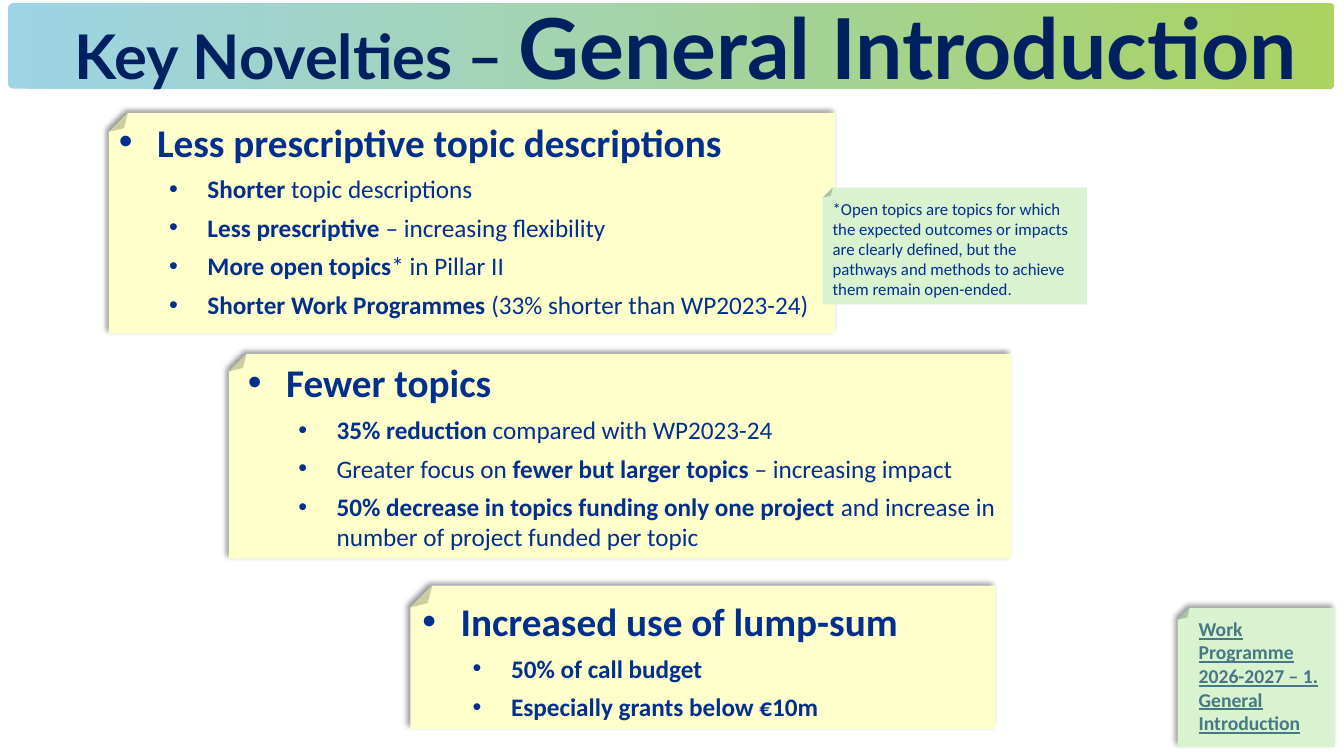
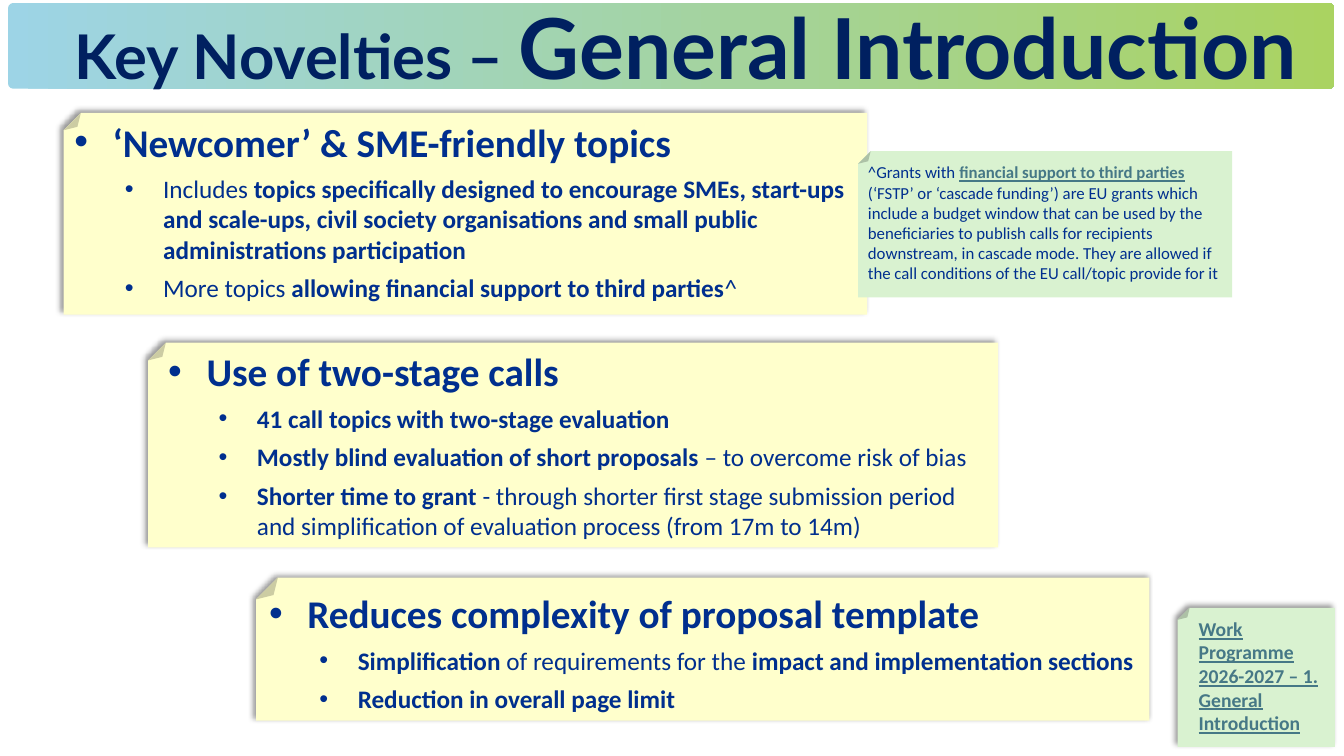
from pptx import Presentation
from pptx import util as u
from pptx.dml.color import RGBColor
from pptx.enum import shapes, text
from pptx.oxml.ns import qn
from lxml import etree

PX = 9144
SLIDE_SIZE = (1333, 750)
NAVY, BLUE, LINK = "002060", "002F8E", "467886"
YELLOW, GREEN = "FFFFCC", "D9F2D0"
BAND_COLOURS = ("9DD4E6", "AAD361")
FOLD, DEEP_FOLD = 0.086, 0.152
BAND_BOX = (8, 3, 1315, 85)
TITLE_BOX = (64, -9, 1259, 111)
TITLE_RUNS = (("Key Novelties – ", 44), ("General Introduction", 60))
SOURCE_BOX, SOURCE_TEXT_BOX = (1168, 603, 156, 138), (1179, 607, 148, 128)
SOURCE = "Work Programme 2026-2027 – 1. General Introduction"

SLIDES = [
    {
        "cards": [
            {"box": (407, 581, 580, 142), "text_box": (409, 588, 545, 135), "fold": DEEP_FOLD,
             "heading": "Increased use of lump-sum",
             "points": ["|50% of call budget|", "|Especially grants below €10m|"]},
            {"box": (227, 351, 776, 203), "text_box": (236, 351, 821, 204), "fold": FOLD,
             "heading": "Fewer topics",
             "points": ["|35% reduction |compared with WP2023-24",
                        "Greater focus on |fewer but larger topics |– increasing impact",
                        "|50% decrease in topics funding only one project |"
                        "and increase in number of project funded per topic"]},
            {"box": (108, 112, 720, 219), "text_box": (108, 112, 797, 212), "fold": FOLD,
             "heading": "Less prescriptive topic descriptions",
             "points": ["|Shorter| topic descriptions",
                        "|Less prescriptive |– increasing flexibility",
                        "|More open topics|* in Pillar II",
                        "|Shorter Work Programmes |(33% shorter than WP2023-24)"]},
        ],
        "note_box": (816, 186, 262, 116),
        "note": ["*Open topics are topics for which the expected outcomes or impacts are clearly "
                 "defined, but the pathways and methods to achieve them remain open-ended."],
    },
    {
        "cards": [
            {"box": (254, 573, 886, 142), "text_box": (257, 580, 878, 135), "fold": DEEP_FOLD,
             "heading": "Reduces complexity of proposal template",
             "points": ["|Simplification| of requirements for the |impact and implementation sections|",
                        "|Reduction in overall page limit|"]},
            {"box": (63, 112, 797, 200), "text_box": (64, 112, 797, 195), "fold": FOLD,
             "heading": "‘Newcomer’ & SME-friendly topics",
             "points": ["Includes |topics specifically designed to encourage SMEs, start-ups and "
                        "scale-ups, civil society organisations and small public administrations "
                        "participation|",
                        "More topics |allowing financial support to third parties|^"]},
            {"box": (147, 340, 843, 203), "text_box": (157, 340, 821, 204), "fold": FOLD,
             "heading": "Use of two-stage calls",
             "points": ["|41 call topics with two-stage evaluation|",
                        "|Mostly blind evaluation of short proposals |– to overcome risk of bias",
                        "|Shorter time to grant |- through shorter first stage submission period "
                        "and simplification of evaluation process (from 17m to 14m)"]},
        ],
        "note_box": (851, 150, 371, 145),
        "note": ["^Grants with |financial support to third parties|",
                 "(‘FSTP’ or ‘cascade funding’) are EU grants which include a budget window that can "
                 "be used by the beneficiaries to publish calls for recipients downstream, in cascade "
                 "mode. They are allowed if the call conditions of the EU call/topic provide for it"],
    },
]


def px(values):
    return [u.Emu(value * PX) for value in values]


def colour(value):
    return RGBColor.from_string(value)


def add_span(para, words, size, font="Calibri", ink=BLUE, bold=False, underline=False):
    span = para.add_run()
    span.text = words
    span.font.name, span.font.size = font, u.Pt(size)
    span.font.bold, span.font.underline = bold, underline
    span.font.color.rgb = colour(ink)


def add_marked(para, marked, size, emphasis):
    for index, words in enumerate(marked.split("|")):
        if words:
            add_span(para, words, size, **(emphasis if index % 2 else {}))


def add_text_box(page, box):
    frame = page.shapes.add_textbox(*px(box)).text_frame
    frame.word_wrap = True
    frame.vertical_anchor = text.MSO_ANCHOR.TOP
    return frame


def add_paras(frame, count):
    return [frame.paragraphs[0]] + [frame.add_paragraph() for _ in range(count - 1)]


def add_bullet(para, level):
    para.level = level
    para.space_after = u.Pt(6)
    props = para._p.get_or_add_pPr()
    props.set("marL", str(u.Inches(0.88 if level else 0.38)))
    props.set("indent", str(-u.Inches(0.38)))
    etree.SubElement(props, qn("a:buFont"), typeface="Arial")
    etree.SubElement(props, qn("a:buChar"), char="•")


def add_shape(page, kind, box, adjustment):
    shape = page.shapes.add_shape(kind, *px(box))
    guides = shape._element.spPr.find(qn("a:prstGeom")).find(qn("a:avLst"))
    for guide in list(guides):
        guides.remove(guide)
    etree.SubElement(guides, qn("a:gd"), name="adj", fmla=f"val {round(adjustment * 100000)}")
    shape.line.fill.background()
    shape.shadow.inherit = False
    return shape


def add_sheet(page, box, fill, fold=FOLD, shadow=True):
    sheet = add_shape(page, shapes.MSO_SHAPE.FOLDED_CORNER, box, fold)
    sheet.rotation = 180
    sheet.fill.solid()
    sheet.fill.fore_color.rgb = colour(fill)
    if shadow:
        effects = sheet._element.spPr.find(qn("a:effectLst"))
        outer = etree.SubElement(effects, qn("a:outerShdw"), blurRad=str(u.Pt(4)),
                                 dist=str(u.Pt(3)), dir="13500000", algn="br", rotWithShape="0")
        tint = etree.SubElement(outer, qn("a:srgbClr"), val="000000")
        etree.SubElement(tint, qn("a:alpha"), val="40000")


def add_card(page, card):
    add_sheet(page, card["box"], YELLOW, card["fold"])
    frame = add_text_box(page, card["text_box"])
    heading, *points = add_paras(frame, len(card["points"]) + 1)
    add_bullet(heading, 0)
    add_span(heading, card["heading"], 28, bold=True)
    for para, point in zip(points, card["points"]):
        add_bullet(para, 1)
        add_marked(para, point, 18, {"bold": True})


def add_source(page):
    add_sheet(page, SOURCE_BOX, GREEN)
    frame = add_text_box(page, SOURCE_TEXT_BOX)
    add_span(frame.paragraphs[0], SOURCE, 14, ink=LINK, bold=True, underline=True)


def add_note(page, box, lines):
    add_sheet(page, box, GREEN, shadow=False)
    left, top, width, height = box
    frame = add_text_box(page, (left, top + 6, width, height - 12))
    for para, line in zip(add_paras(frame, len(lines)), lines):
        add_marked(para, line, 12, {"ink": LINK, "bold": True, "underline": True})


def add_title(page):
    band = add_shape(page, shapes.MSO_SHAPE.ROUNDED_RECTANGLE, BAND_BOX, 0.06)
    band.fill.gradient()
    band.fill.gradient_angle = 0
    for stop, value in zip(band.fill.gradient_stops, BAND_COLOURS):
        stop.color.rgb = colour(value)
    para = add_text_box(page, TITLE_BOX).paragraphs[0]
    for words, size in TITLE_RUNS:
        add_span(para, words, size, font="Lato", ink=NAVY, bold=True)


def main():
    deck = Presentation()
    deck.slide_width, deck.slide_height = px(SLIDE_SIZE)
    for content in SLIDES:
        page = deck.slides.add_slide(deck.slide_layouts[6])
        for card in content["cards"]:
            add_card(page, card)
        add_source(page)
        add_note(page, content["note_box"], content["note"])
        add_title(page)
    deck.save("out.pptx")


if __name__ == "__main__":
    main()
